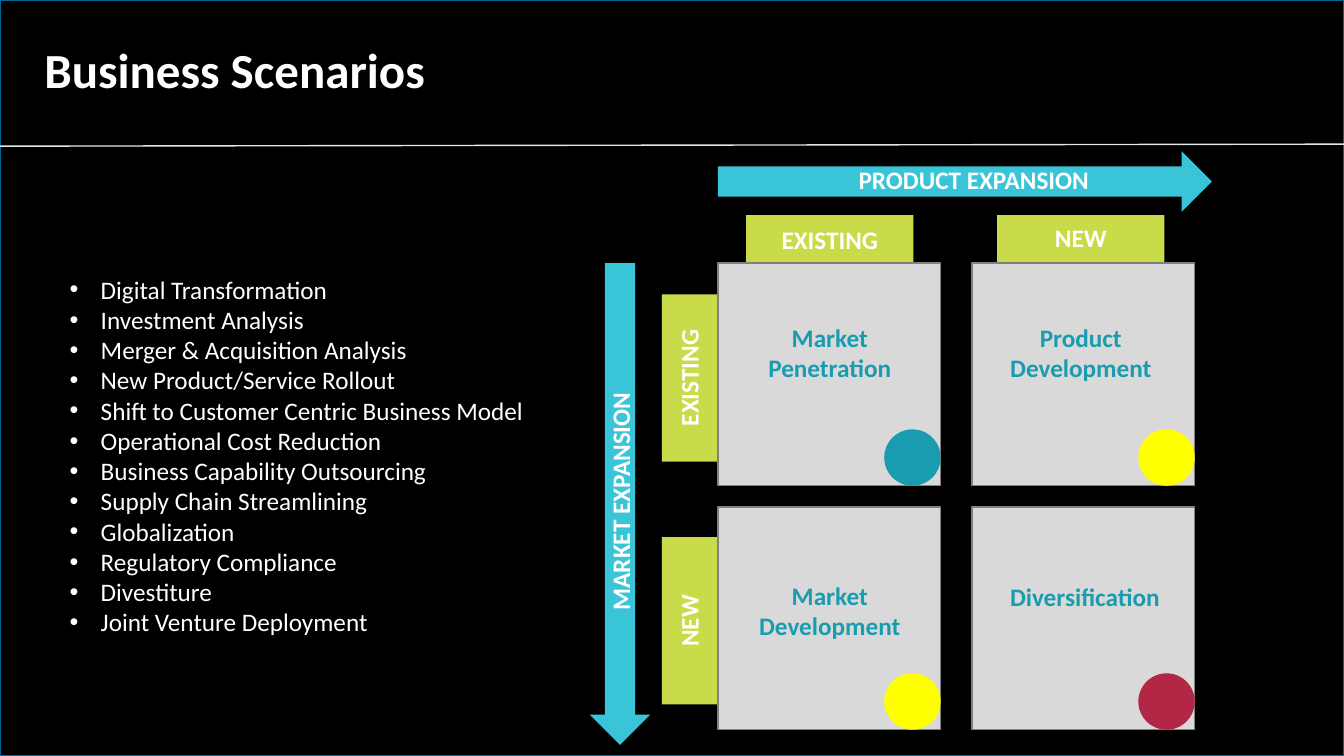
from dataclasses import dataclass

from lxml import etree
from pptx import Presentation
from pptx import util as u
from pptx.dml.color import RGBColor
from pptx.enum import shapes, text
from pptx.oxml.ns import qn

TITLE = "Business Scenarios"
SCENARIOS = [
    "Digital Transformation",
    "Investment Analysis",
    "Merger & Acquisition Analysis",
    "New Product/Service Rollout",
    "Shift to Customer Centric Business Model",
    "Operational Cost Reduction",
    "Business Capability Outsourcing",
    "Supply Chain Streamlining",
    "Globalization",
    "Regulatory Compliance",
    "Divestiture",
    "Joint Venture Deployment",
]
PRODUCT_AXIS, MARKET_AXIS = "PRODUCT EXPANSION", "MARKET EXPANSION"
STAGES = [("EXISTING", 2.38), ("NEW", 2.36)]
QUADRANTS = [
    [("Market Penetration", "teal", 3.5), ("Product Development", "yellow", 3.5)],
    [("Market Development", "yellow", 6.06), ("Diversification", "crimson", 5.92)],
]


@dataclass(frozen=True)
class Theme:
    font: str = "Calibri"
    title: int = 35
    body: int = 18
    black: str = "000000"
    white: str = "FFFFFF"
    frame: str = "006699"
    rule: str = "E6E6E6"
    lime: str = "C9DB48"
    cyan: str = "39C5D7"
    tile: str = "D9D9D9"
    edge: str = "808080"
    teal: str = "1A9CB0"
    yellow: str = "FFFF00"
    crimson: str = "B22746"


theme = Theme()
WIDTH, HEIGHT = 13.33, 7.5
GRID_LEFT, GRID_TOP = 7.12, 2.61
COLUMN_STEP, ROW_STEP, TILE = 2.52, 2.42, 2.21
TAB_LEFT, TAB_TOP = 8.23, 3.75
TAB_COLUMN_STEP, TAB_ROW_STEP = 2.49, 2.41
TAB_LONG, TAB_SHORT = 1.66, 0.83
DOT, ARROW, LABEL = 0.56, 0.6, 0.4

deck = Presentation()
deck.slide_width, deck.slide_height = u.Inches(WIDTH), u.Inches(HEIGHT)
page = deck.slides.add_slide(deck.slide_layouts[6])


def add_block(kind, left, top, width, height, fill, line=None, turn=0):
    block = page.shapes.add_shape(kind, *map(u.Inches, (left, top, width, height)))
    block.shadow.inherit = False
    block.rotation = turn
    block.fill.solid()
    block.fill.fore_color.rgb = RGBColor.from_string(fill)
    if line:
        block.line.color.rgb = RGBColor.from_string(line)
        block.line.width = u.Pt(1)
    else:
        block.line.fill.background()


def add_tab(center_x, center_y, turn=0):
    add_block(shapes.MSO_SHAPE.RECTANGLE, center_x - TAB_LONG / 2,
              center_y - TAB_SHORT / 2, TAB_LONG, TAB_SHORT, theme.lime, turn=turn)


def add_text(lines, left, top, width, height, color=theme.white, size=theme.body,
             bold=True, align=text.PP_ALIGN.LEFT, turn=0, bullets=False, spacing=None):
    box = page.shapes.add_textbox(*map(u.Inches, (left, top, width, height)))
    box.rotation = turn
    frame = box.text_frame
    frame.word_wrap = True
    frame.margin_left = frame.margin_right = u.Inches(0.08)
    frame.text = "\n".join(lines)
    for para in frame.paragraphs:
        para.alignment = align
        para.line_spacing = spacing
        if bullets:
            props = para._p.get_or_add_pPr()
            props.set("marL", str(u.Inches(0.31)))
            props.set("indent", str(-u.Inches(0.31)))
            etree.SubElement(props, qn("a:buFont")).set("typeface", "Arial")
            etree.SubElement(props, qn("a:buChar")).set("char", "•")
        for span in para.runs:
            span.font.name, span.font.size, span.font.bold = theme.font, u.Pt(size), bold
            span.font.color.rgb = RGBColor.from_string(color)


def add_label(words, center_x, center_y, width=TAB_LONG, height=LABEL, **style):
    style.setdefault("align", text.PP_ALIGN.CENTER)
    add_text([words], center_x - width / 2, center_y - height / 2, width, height, **style)


def add_header():
    add_block(shapes.MSO_SHAPE.RECTANGLE, 0, 0, WIDTH, HEIGHT, theme.black, theme.frame)
    rule = page.shapes.add_connector(
        shapes.MSO_CONNECTOR.STRAIGHT, *map(u.Inches, (WIDTH, 1.43, 0, 1.45)))
    rule.line.color.rgb = RGBColor.from_string(theme.rule)
    rule.line.width = u.Pt(1)
    etree.SubElement(rule._element.spPr, qn("a:effectLst"))
    add_text([TITLE], 0.36, 0.41, 12.62, 0.45, size=theme.title, spacing=0.9)


def add_matrix():
    for index in range(len(STAGES)):
        add_tab(TAB_LEFT + index * TAB_COLUMN_STEP, 2.55)
        add_tab(6.98, TAB_TOP + index * TAB_ROW_STEP, 90)
    for row, cells in enumerate(QUADRANTS):
        for column, (name, dot, center_y) in enumerate(cells):
            left = GRID_LEFT + column * COLUMN_STEP
            top = GRID_TOP + row * ROW_STEP
            add_block(shapes.MSO_SHAPE.RECTANGLE, left, top, TILE, TILE,
                      theme.tile, theme.edge)
            add_block(shapes.MSO_SHAPE.OVAL, left + TILE - DOT, top + TILE - DOT,
                      DOT, DOT, getattr(theme, dot))
            one_word = " " not in name
            add_label(name, 10.76 if one_word else TAB_LEFT + column * TAB_COLUMN_STEP,
                      center_y, 1.81 if one_word else TAB_LONG,
                      LABEL if one_word else 0.71, color=theme.teal)
    for index, (stage, center_y) in enumerate(STAGES):
        add_label(stage, TAB_LEFT + index * TAB_COLUMN_STEP, center_y)
        add_label(stage, 6.83, TAB_TOP + index * TAB_ROW_STEP, turn=270)


def add_axes():
    arrow = shapes.MSO_SHAPE.RIGHT_ARROW
    add_block(arrow, GRID_LEFT, 1.5, 4.9, ARROW, theme.cyan)
    add_block(arrow, 3.76, 4.7, 4.78, ARROW, theme.cyan, turn=90)
    add_label(PRODUCT_AXIS, 10.31, 1.78, 3.75, align=text.PP_ALIGN.LEFT)
    add_label(MARKET_AXIS, 6.15, 4.26, 3.75, align=text.PP_ALIGN.LEFT, turn=270)


add_header()
add_matrix()
add_axes()
add_text(SCENARIOS, 0.61, 2.67, 4.97, 4.04, bold=False, bullets=True)
deck.save("out.pptx")
